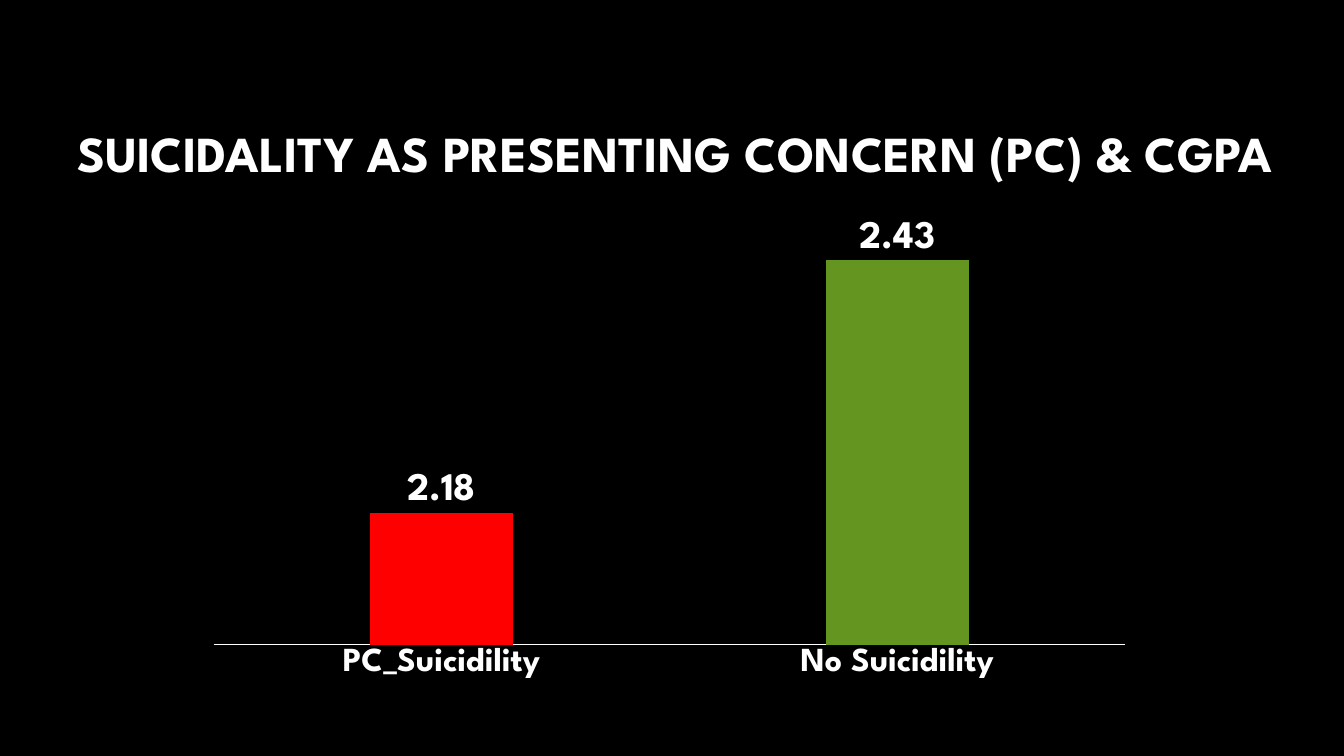
from dataclasses import dataclass

from lxml import etree
from pptx import Presentation
from pptx import util as u
from pptx.chart.data import CategoryChartData
from pptx.dml.color import RGBColor
from pptx.enum import chart as charts, text
from pptx.oxml.ns import qn


@dataclass(frozen=True)
class Theme:
    font: str = "League Spartan"
    background: str = "000000"
    ink: str = "FFFFFF"
    series: str = "01D17D"
    bars: tuple = ("FF0000", "639520")
    title_size: int = 36
    value_size: int = 28
    category_size: int = 24
    chart_size: int = 10


THEME = Theme()


def paint(fill, colour):
    fill.solid()
    fill.fore_color.rgb = RGBColor.from_string(colour)


def style_font(font, size, bold=True):
    for name, value in {"name": THEME.font, "size": u.Pt(size), "bold": bold}.items():
        setattr(font, name, value)
    font.color.rgb = RGBColor.from_string(THEME.ink)


def place_plot(chart, fractions):
    """Fix the inner plot area as fractions of the chart frame."""
    area = chart.plots[0]._element.getparent()
    layout = area.find(qn("c:layout"))
    if layout is None:
        layout = etree.Element(qn("c:layout"))
        area.insert(0, layout)
    manual = etree.SubElement(layout, qn("c:manualLayout"))
    settings = {"layoutTarget": "inner", "xMode": "edge", "yMode": "edge", **fractions}
    for tag, value in settings.items():
        etree.SubElement(manual, qn(f"c:{tag}")).set("val", str(value))


def add_title(page, box, wording):
    title = page.shapes.add_textbox(*map(u.Inches, box))
    frame = title.text_frame
    frame.word_wrap = True
    frame.vertical_anchor = text.MSO_ANCHOR.MIDDLE
    para = frame.paragraphs[0]
    para.alignment = text.PP_ALIGN.CENTER
    para.line_spacing = 0.9
    span = para.add_run()
    span.text = wording
    style_font(span.font, THEME.title_size)


def add_cgpa_chart(page, box, averages):
    data = CategoryChartData(number_format="0.00")
    data.categories = list(averages)
    data.add_series("Series 1", list(averages.values()))
    chart = page.shapes.add_chart(
        charts.XL_CHART_TYPE.COLUMN_CLUSTERED, *map(u.Inches, box), data).chart
    chart.has_title = False
    chart.has_legend = False
    style_font(chart.font, THEME.chart_size, bold=False)
    place_plot(chart, {"x": 0.02, "y": 0.04, "w": 0.96, "h": 0.87})

    # Axes
    scale = chart.value_axis
    for name, value in {"minimum_scale": 2.05, "maximum_scale": 2.45,
                        "has_major_gridlines": False, "visible": False}.items():
        setattr(scale, name, value)
    groups = chart.category_axis
    groups.major_tick_mark = charts.XL_TICK_MARK.NONE
    groups.format.line.width = u.Pt(0.75)
    paint(groups.format.line.fill, THEME.ink)
    style_font(groups.tick_labels.font, THEME.category_size)

    # Bars
    plot = chart.plots[0]
    for name, value in {"gap_width": 219, "overlap": -27,
                        "vary_by_categories": False}.items():
        setattr(plot, name, value)
    series = plot.series[0]
    paint(series.format.fill, THEME.series)
    for index, colour in enumerate(THEME.bars):
        paint(series.points[index].format.fill, colour)

    # Value labels
    labels = series.data_labels
    labels.show_value = True
    labels.position = charts.XL_LABEL_POSITION.OUTSIDE_END
    style_font(labels.font, THEME.value_size)


def main():
    deck = Presentation()
    deck.slide_width, deck.slide_height = u.Inches(13.33), u.Inches(7.5)
    page = deck.slides.add_slide(deck.slide_layouts[6])
    paint(page.background.fill, THEME.background)
    add_title(page, (0.22, 0.84, 12.95, 1.41),
              "SUICIDALITY AS PRESENTING CONCERN (PC) & CGPA")
    add_cgpa_chart(page, (1.93, 2.19, 9.42, 4.62),
                   {"PC_Suicidility": 2.18, "No Suicidility": 2.43})
    deck.save("out.pptx")


if __name__ == "__main__":
    main()
